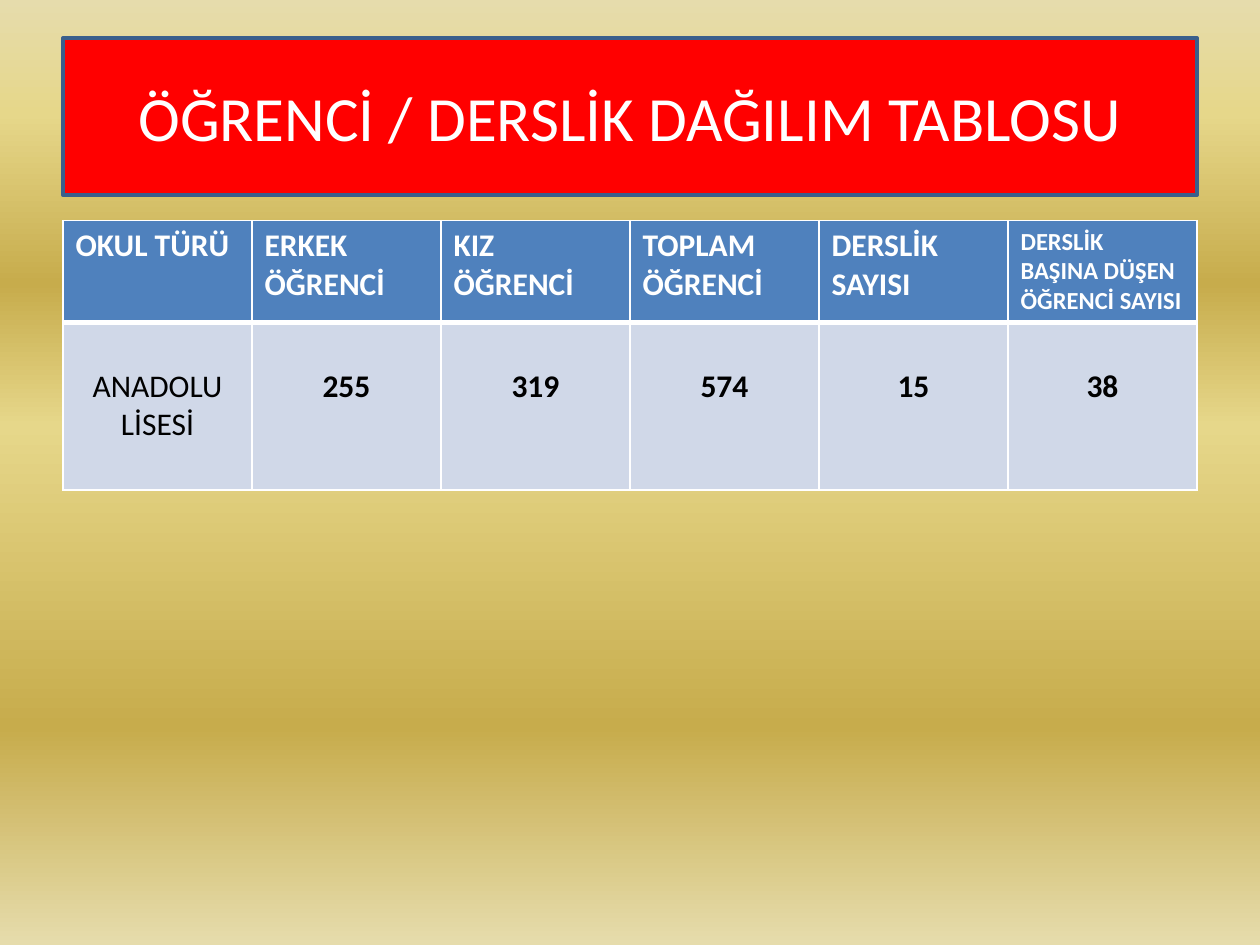
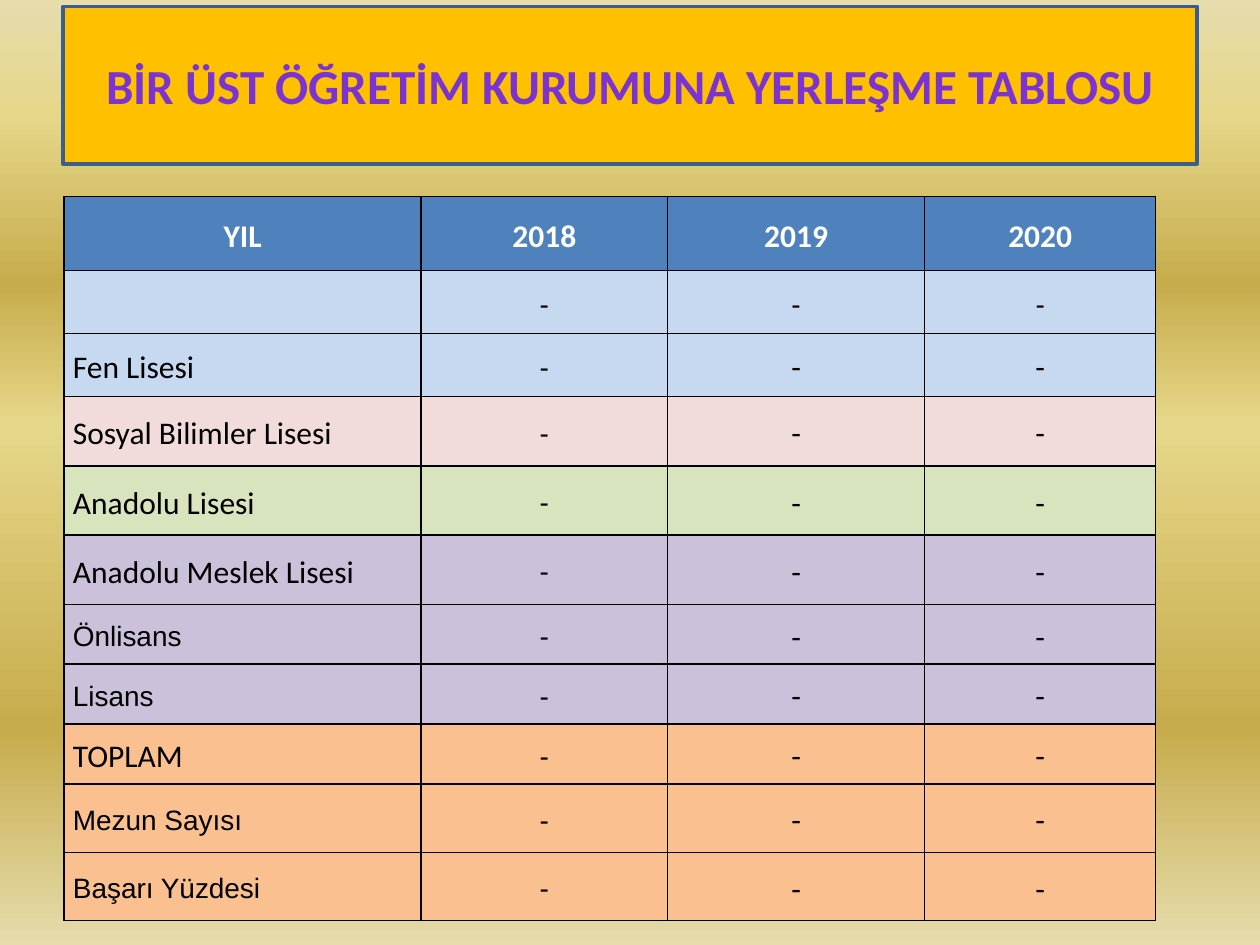
import pptx
import pptx.util
import pptx.dml.color
import pptx.enum.shapes
import pptx.enum.text
import pptx.oxml.ns
import lxml.etree

Pt = pptx.util.Pt
qn = pptx.oxml.ns.qn
ALIGN = pptx.enum.text.PP_ALIGN
MIDDLE = pptx.enum.text.MSO_ANCHOR.MIDDLE

INK = {
    "white": "FFFFFF", "black": "000000", "red": "FF0000", "gold": "FFC000",
    "edge": "3A5F8C", "purple": "7B34D2", "head": "4F81BD", "pale": "D0D8E8",
    "blue": "C6D9F1", "pink": "F2DCDB", "green": "D7E4BD", "lilac": "CCC1DA",
    "orange": "FAC090", "cream": "E6DCAC", "straw": "E6D78A", "brass": "C7AC4C",
}
STOPS = [(0, "cream"), (12, "straw"), (30, "brass"),
         (45, "straw"), (77, "brass"), (100, "cream")]

HEADS = ["OKUL TÜRÜ", "ERKEK ÖĞRENCİ", "KIZ ÖĞRENCİ", "TOPLAM ÖĞRENCİ",
         "DERSLİK SAYISI", "DERSLİK BAŞINA DÜŞEN ÖĞRENCİ SAYISI"]
COUNTS = ["ANADOLU LİSESİ", "255", "319", "574", "15", "38"]

YEARS = ["YIL", "2018", "2019", "2020"]
WIDTHS = [204, 140.75, 147, 132]
ARIAL = ("Arial", 16)
CALIBRI = ("Calibri", 18)
SCHOOLS = [
    ("", "blue", 36, CALIBRI),
    ("Fen Lisesi", "blue", 36, CALIBRI),
    ("Sosyal Bilimler Lisesi", "pink", 39.6, CALIBRI),
    ("Anadolu Lisesi", "green", 39.6, CALIBRI),
    ("Anadolu Meslek Lisesi", "lilac", 39.6, CALIBRI),
    ("Önlisans", "lilac", 34.2, ARIAL),
    ("Lisans", "lilac", 34.2, ARIAL),
    ("TOPLAM", "orange", 34.4, CALIBRI),
    ("Mezun Sayısı", "orange", 38.9, ARIAL),
    ("Başarı Yüzdesi", "orange", 38.9, ARIAL),
]


def tint(name):
    return pptx.dml.color.RGBColor.from_string(INK[name])


def paint(fill, name):
    fill.solid()
    fill.fore_color.rgb = tint(name)


def style(para, face, size, ink, bold=False, align=ALIGN.CENTER):
    para.alignment = align
    font = para.font
    font.name, font.size, font.bold = face, Pt(size), bold
    font.color.rgb = tint(ink)


def shade(master):
    fill = master.background.fill
    fill.gradient()
    fill.gradient_angle = 270
    stops = master.element.find(".//" + qn("p:bg")).find(".//" + qn("a:gsLst"))
    stops.clear()
    for place, name in STOPS:
        stop = lxml.etree.SubElement(stops, qn("a:gs"), pos=str(place * 1000))
        lxml.etree.SubElement(stop, qn("a:srgbClr"), val=INK[name])


def border(cell, ink, **widths):
    props = cell._tc.get_or_add_tcPr()
    for spot, side in enumerate("LRTB"):
        line = lxml.etree.Element(qn("a:ln" + side), w=str(Pt(widths.get(side, 1))))
        fill = lxml.etree.SubElement(line, qn("a:solidFill"))
        lxml.etree.SubElement(fill, qn("a:srgbClr"), val=INK[ink])
        props.insert(spot, line)


def banner(slide, box, text, back, ink, size, bold=False):
    shape = slide.shapes.add_shape(
        pptx.enum.shapes.MSO_SHAPE.RECTANGLE, *map(Pt, box))
    shape.shadow.inherit = False
    paint(shape.fill, back)
    shape.line.color.rgb = tint("edge")
    shape.line.width = Pt(2)
    frame = shape.text_frame
    frame.word_wrap = True
    frame.vertical_anchor = MIDDLE
    frame.text = text
    style(frame.paragraphs[0], "Calibri", size, ink, bold)


def grid(slide, spot, widths, heights):
    size = sum(widths), sum(heights)
    table = slide.shapes.add_table(
        len(heights), len(widths), *map(Pt, (*spot, *size))).table
    table.horz_banding = False
    for col, width in zip(table.columns, widths):
        col.width = Pt(width)
    for row, height in zip(table.rows, heights):
        row.height = Pt(height)
    return table


def class_grid(slide, box):
    left, top, width, height = box
    head = 58
    count = len(HEADS)
    table = grid(slide, (left, top), [width / count] * count, [head, height - head])
    for col, (title, value) in enumerate(zip(HEADS, COUNTS)):
        cell = table.cell(0, col)
        cell.text = title
        paint(cell.fill, "head")
        border(cell, "white", B=3)
        size = 14 if col == count - 1 else 18
        style(cell.text_frame.paragraphs[0], "Calibri", size, "white", True, ALIGN.LEFT)

        cell = table.cell(1, col)
        cell.text = value
        cell.margin_top = Pt(25.6)
        paint(cell.fill, "pale")
        border(cell, "white", T=3)
        style(cell.text_frame.paragraphs[0], "Calibri", 18, "black", col > 0)


def year_cell(cell, text, back, face, ink="black", bold=False, align=ALIGN.CENTER):
    cell.vertical_anchor = MIDDLE
    cell.margin_left = cell.margin_right = Pt(5)
    cell.margin_top = cell.margin_bottom = 0
    paint(cell.fill, back)
    border(cell, "black")
    cell.text = text
    para = cell.text_frame.paragraphs[0]
    para.line_spacing = 1.15
    style(para, *face, ink, bold, align)


def year_grid(slide, spot):
    heights = [42.4] + [school[2] for school in SCHOOLS]
    table = grid(slide, spot, WIDTHS, heights)
    for col, year in enumerate(YEARS):
        year_cell(table.cell(0, col), year, "head", CALIBRI, "white", True)
    for row, (name, back, _, face) in enumerate(SCHOOLS, 1):
        year_cell(table.cell(row, 0), name, back, face, align=ALIGN.LEFT)
        for col in range(1, len(YEARS)):
            dash = ARIAL if row == 1 or col == 1 else CALIBRI
            year_cell(table.cell(row, col), "-", back, dash)


def main():
    deck = pptx.Presentation()
    deck.slide_width, deck.slide_height = Pt(720), Pt(540)
    shade(deck.slide_master)
    blank = deck.slide_layouts[6]

    slide = deck.slides.add_slide(blank)
    banner(slide, (36, 21.6, 648, 90), "ÖĞRENCİ / DERSLİK DAĞILIM TABLOSU",
           "red", "white", 36)
    class_grid(slide, (36, 126, 648, 153.6))

    slide = deck.slides.add_slide(blank)
    banner(slide, (36, 3.6, 648, 90), "BİR ÜST ÖĞRETİM KURUMUNA YERLEŞME TABLOSU",
           "gold", "purple", 28, True)
    year_grid(slide, (36.7, 112.2))

    deck.save("out.pptx")


if __name__ == "__main__":
    main()
